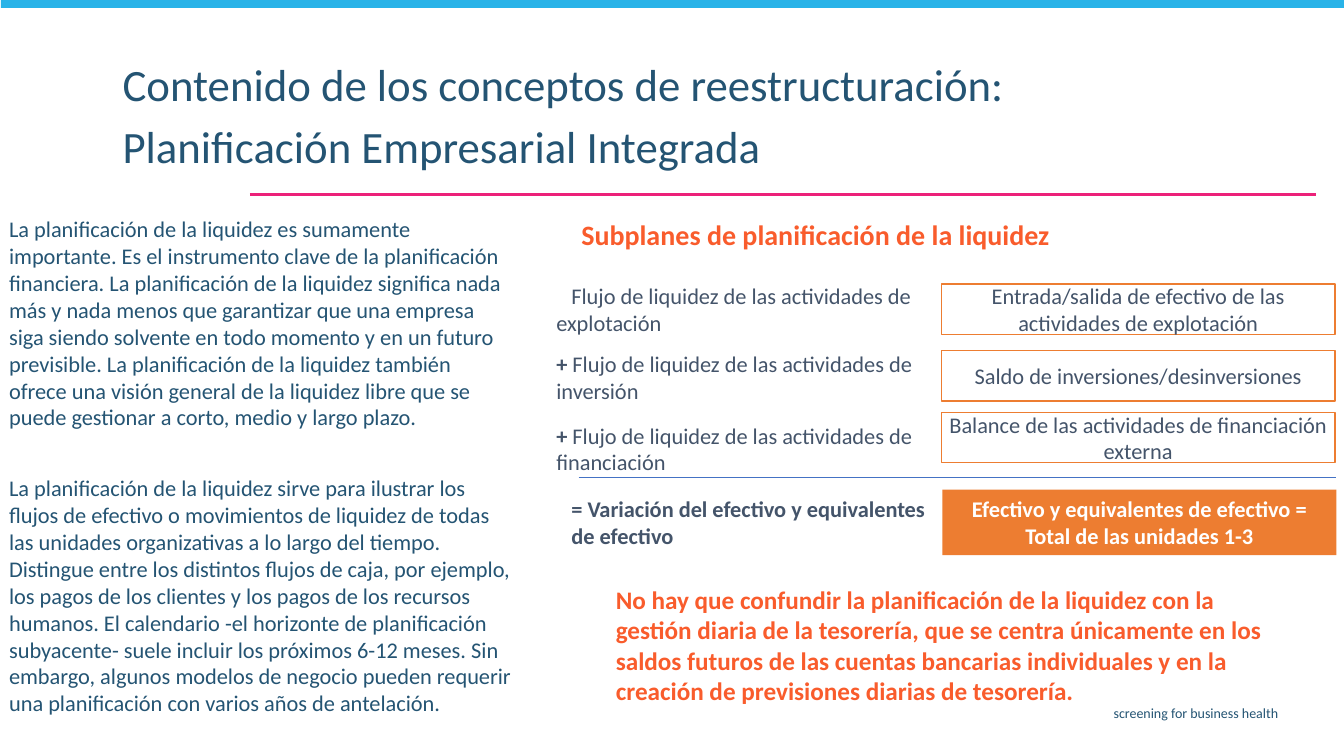
from lxml.etree import SubElement
from pptx import Presentation
from pptx.dml.color import RGBColor
from pptx.enum.shapes import MSO_CONNECTOR, MSO_SHAPE
from pptx.enum.text import MSO_ANCHOR, PP_ALIGN
from pptx.oxml.ns import qn
from pptx.util import Cm, Pt

WHITE = RGBColor(0xFF, 0xFF, 0xFF)
NAVY = RGBColor(0x24, 0x54, 0x73)
SLATE = RGBColor(0x44, 0x54, 0x6A)
ORANGE = RGBColor(0xED, 0x7D, 0x31)
CORAL = RGBColor(0xF9, 0x5C, 0x2C)
PINK = RGBColor(0xEC, 0x21, 0x79)
SKY = RGBColor(0x29, 0xB3, 0xE8)
BLUE = RGBColor(0x44, 0x72, 0xC4)

TITLE = [
    "Contenido de los conceptos de reestructuración:",
    "Planificación Empresarial Integrada",
]
EXPLANATION = [
    "La planificación de la liquidez es sumamente importante. Es el instrumento "
    "clave de la planificación financiera. La planificación de la liquidez "
    "significa nada más y nada menos que garantizar que una empresa siga siendo "
    "solvente en todo momento y en un futuro previsible. La planificación de la "
    "liquidez también ofrece una visión general de la liquidez libre que se puede "
    "gestionar a corto, medio y largo plazo.",
    "La planificación de la liquidez sirve para ilustrar los flujos de efectivo o "
    "movimientos de liquidez de todas las unidades organizativas a lo largo del "
    "tiempo. Distingue entre los distintos flujos de caja, por ejemplo, los pagos "
    "de los clientes y los pagos de los recursos humanos. El calendario -el "
    "horizonte de planificación subyacente- suele incluir los próximos 6-12 meses. "
    "Sin embargo, algunos modelos de negocio pueden requerir una planificación con "
    "varios años de antelación.",
]
WARNING = (
    "No hay que confundir la planificación de la liquidez con la gestión diaria de "
    "la tesorería, que se centra únicamente en los saldos futuros de las cuentas "
    "bancarias individuales y en la creación de previsiones diarias de tesorería."
)

deck = Presentation()
deck.slide_width, deck.slide_height = Cm(33.87), Cm(19.05)
page = deck.slides.add_slide(deck.slide_layouts[6])


def add_block(kind, place, texts, size, color, bold=False, fill=None, line=None):
    left, top, width, height = map(Cm, place)
    if kind == "text":
        block = page.shapes.add_textbox(left, top, width, height)
    else:
        block = page.shapes.add_shape(MSO_SHAPE.RECTANGLE, left, top, width, height)
        block.shadow.inherit = False
        block.fill.solid()
        block.fill.fore_color.rgb = fill
        if line is None:
            block.line.fill.background()
        else:
            block.line.color.rgb = line
            block.line.width = Pt(1)
    frame = block.text_frame
    frame.word_wrap = True
    if kind == "box":
        frame.vertical_anchor = MSO_ANCHOR.MIDDLE
        frame.margin_left = frame.margin_right = Cm(0.2)
        frame.margin_top = frame.margin_bottom = Cm(0.2)
    frame.text = "\n".join(texts)
    for paragraph in frame.paragraphs:
        paragraph.alignment = PP_ALIGN.LEFT
        for span in paragraph.runs:
            span.font.name = "Calibri"
            span.font.size = Pt(size)
            span.font.bold = bold
            span.font.color.rgb = color
    return frame


def add_rule(start, end, level, color, width):
    rule = page.shapes.add_connector(
        MSO_CONNECTOR.STRAIGHT, Cm(start), Cm(level), Cm(end), Cm(level))
    rule.line.color.rgb = color
    rule.line.width = Pt(width)
    SubElement(rule._element.spPr, qn("a:effectLst"))


add_rule(6.3, 33.17, 4.9, PINK, 1.5)
add_block("band", (0.02, -0.05, 33.88, 0.25), [], 10, WHITE, fill=SKY)
footer = add_block("text", (9.27, 17.63, 23.19, 0.74),
                   ["screening for business health"], 10, NAVY)
footer.paragraphs[0].alignment = PP_ALIGN.RIGHT

title = add_block("text", (2.84, 1.45, 29.36, 3.02), TITLE, 32, NAVY)
for paragraph in title.paragraphs:
    paragraph.line_spacing = 0.9
title.paragraphs[1].space_before = Pt(10)

flows = [
    (13.82, 7.16, 1.27, "", "Flujo de liquidez de las actividades de explotación"),
    (13.82, 8.86, 1.27, "+ ", "Flujo de liquidez de las actividades de inversión"),
    (13.82, 10.67, 1.27, "+ ", "Flujo de liquidez de las actividades de financiación"),
    (14.2, 12.34, 1.65, "= ", "Variación del efectivo y equivalentes de efectivo"),
]
for left, top, height, sign, label in flows:
    is_total = sign == "= "
    frame = add_block("box", (left, top, 9.93, height), [sign or label], 16, SLATE,
                      bold=bool(sign), fill=WHITE, line=WHITE)
    paragraph = frame.paragraphs[0]
    if sign:
        span = paragraph.add_run()
        span.text = label
        span.font.name = "Calibri"
        span.font.size = Pt(16)
        span.font.bold = is_total
        span.font.color.rgb = SLATE
    else:
        paragraph._p.get_or_add_pPr().set("indent", str(Cm(0.38)))

explanation = add_block("text", (0, 5.33, 13.13, 12.98), EXPLANATION, 16, NAVY)
explanation.margin_left = explanation.margin_right = Cm(0.23)
explanation.margin_top = explanation.margin_bottom = Cm(0.1)
explanation.paragraphs[1].space_before = Pt(31.5)

results = [
    (23.72, 7.16, 1.27, "Entrada/salida de efectivo de las actividades de explotación"),
    (23.72, 8.84, 1.27, "Saldo de inversiones/desinversiones"),
    (23.72, 10.39, 1.27, "Balance de las actividades de financiación externa"),
]
for left, top, height, label in results:
    frame = add_block("box", (left, top, 9.93, height), [label], 16, SLATE,
                      fill=WHITE, line=ORANGE)
    frame.paragraphs[0].alignment = PP_ALIGN.CENTER

total = add_block("box", (23.75, 12.34, 9.93, 1.65),
                  ["Efectivo y equivalentes de efectivo = Total de las unidades 1-3"],
                  16, WHITE, bold=True, fill=ORANGE)
total.paragraphs[0].alignment = PP_ALIGN.CENTER
add_rule(14.58, 33.68, 12.04, BLUE, 0.5)

heading = add_block("text", (14.4, 5.33, 15.8, 1.12),
                    ["Subplanes de planificación de la liquidez"], 20, CORAL, bold=True)
heading.vertical_anchor = MSO_ANCHOR.BOTTOM
add_block("text", (15.27, 14.6, 16.94, 3.33), [WARNING], 18, CORAL, bold=True)

deck.save("out.pptx")
